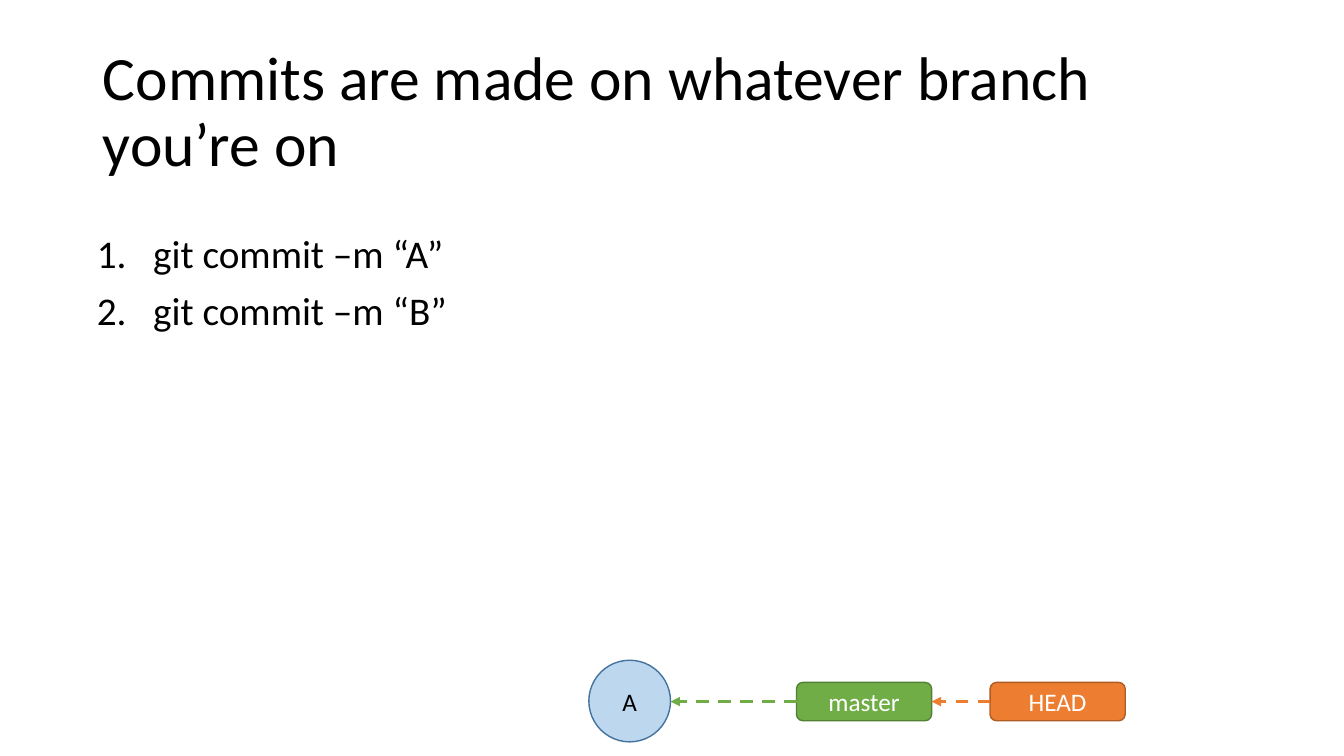
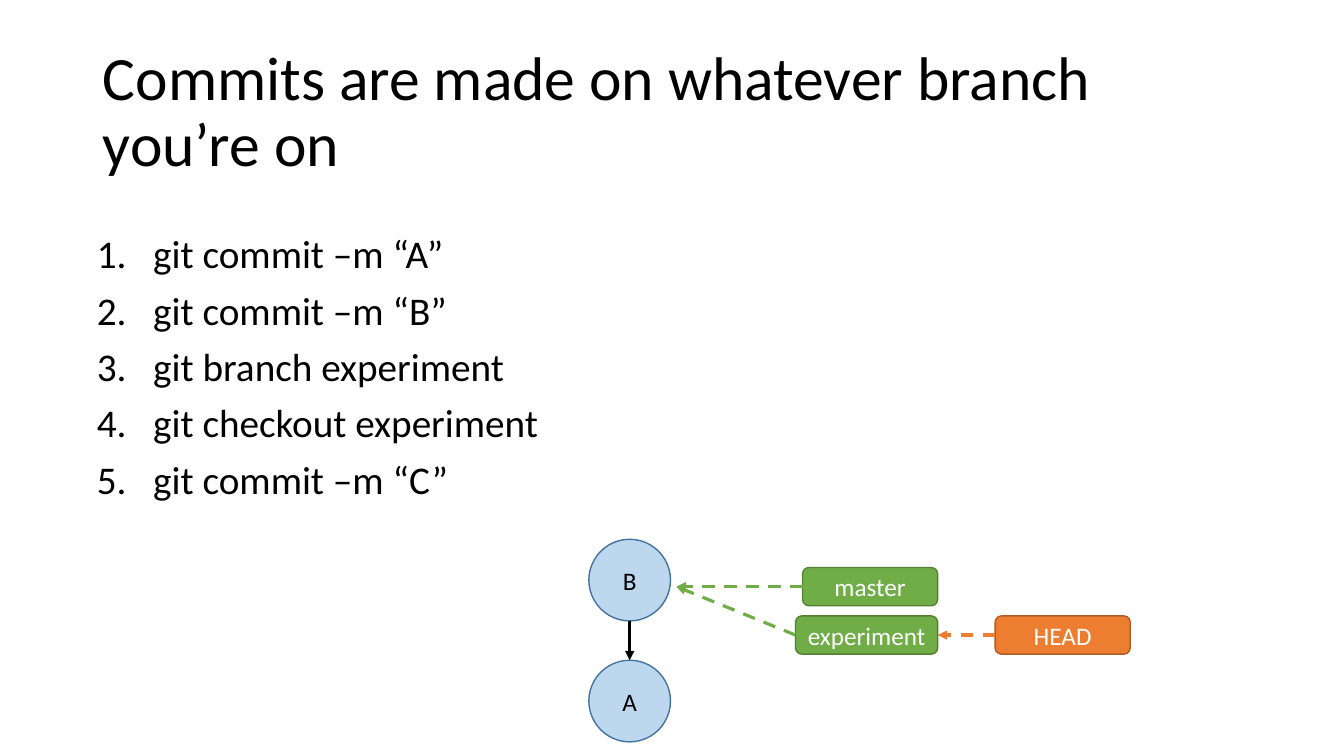
import pptx
import pptx.dml.color
import pptx.enum.dml
import pptx.enum.shapes
import pptx.enum.text
import pptx.oxml
import pptx.oxml.ns
import pptx.util
from dataclasses import dataclass
from typing import Any, Optional

Inches = pptx.util.Inches
Pt = pptx.util.Pt
SHAPES = pptx.enum.shapes.MSO_SHAPE
ALIGN = pptx.enum.text.PP_ALIGN
ANCHOR = pptx.enum.text.MSO_ANCHOR

# Shared style
COLORS = {
    "text": "000000",
    "light": "FFFFFF",
    "commit": "BDD7EE",
    "commit edge": "43739E",
    "branch": "70AD47",
    "branch edge": "538035",
    "head": "ED7D31",
    "head edge": "AF5C24",
}
FONT = "Calibri"
TITLE = "Commits are made on whatever branch you’re on"
TITLE_AREA = (0.92, 0.4, 11.5, 1.45)
LIST_AREA = (0.86, 2.28, 5.22, 4.76)
TITLE_FORMAT = {"alignment": ALIGN.LEFT, "line_spacing": 0.9}
LIST_FORMAT = {"alignment": ALIGN.LEFT, "line_spacing": 0.9,
               "space_before": Pt(10)}
LABEL_FORMAT = {"alignment": ALIGN.CENTER}
LIST_INDENT = 0.56
COMMIT_LEFT, COMMIT_SIZE = 5.84, 0.81
LABEL_HEIGHT = 0.38
TOP, LEFT, BOTTOM, RIGHT = range(4)


@dataclass
class Commit:
    name: str
    top: float


@dataclass
class Label:
    """A branch or HEAD tag, pointing at another label or at a position."""
    name: str
    left: float
    top: float
    points_to: Any
    width: float = 1.34
    style: str = "branch"


@dataclass
class Step:
    commands: list[str]
    commits: list[Commit]
    labels: list[Label]


COMMANDS = [
    "git commit –m “A”",
    "git commit –m “B”",
    "git branch experiment",
    "git checkout experiment",
    "git commit –m “C”",
]
FIRST = Commit("A", 6.55)
BRANCH_TARGET = (6.71, 5.82)
STEPS = [
    Step(COMMANDS[:2], [FIRST], [
        Label("master", 7.9, 6.77, (6.65, 6.96)),
        Label("HEAD", 9.82, 6.77, "master", style="head"),
    ]),
    Step(COMMANDS, [Commit("B", 5.35), FIRST], [
        Label("master", 7.96, 5.63, BRANCH_TARGET),
        Label("experiment", 7.89, 6.11, BRANCH_TARGET, width=1.41),
        Label("HEAD", 9.87, 6.11, "experiment", style="head"),
    ]),
]


def color(name: str) -> pptx.dml.color.RGBColor:
    return pptx.dml.color.RGBColor.from_string(COLORS[name])


def set_values(target: Any, values: dict[str, Any]) -> None:
    for name, value in values.items():
        setattr(target, name, value)


def write(para: Any, text: str, size: float, ink: str,
          layout: dict[str, Any]) -> None:
    set_values(para, layout)
    span = para.add_run()
    span.text = text
    set_values(span.font, {"name": FONT, "size": Pt(size)})
    span.font.color.rgb = color(ink)


def place(holder: Any, area: tuple, anchor: Any) -> Any:
    sides = ("left", "top", "width", "height")
    set_values(holder, dict(zip(sides, map(Inches, area))))
    set_values(holder.text_frame, {
        "word_wrap": True,
        "auto_size": pptx.enum.text.MSO_AUTO_SIZE.NONE,
        "vertical_anchor": anchor,
    })
    return holder.text_frame


def add_element(parent: Any, tag: str, **attributes: str) -> None:
    element = pptx.oxml.parse_xml(
        f"<a:{tag} {pptx.oxml.ns.nsdecls('a')}/>")
    for name, value in attributes.items():
        element.set(name, value)
    parent.append(element)


def add_list(holder: Any, commands: list[str]) -> None:
    frame = place(holder, LIST_AREA, ANCHOR.TOP)
    for index, command in enumerate(commands):
        para = frame.paragraphs[0] if index == 0 else frame.add_paragraph()
        write(para, command, 28, "text", LIST_FORMAT)
        properties = para._p.get_or_add_pPr()
        properties.set("marL", str(Inches(LIST_INDENT)))
        properties.set("indent", str(-Inches(LIST_INDENT)))
        add_element(properties, "buFont", typeface=FONT)
        add_element(properties, "buAutoNum", type="arabicPeriod")


def add_node(page: Any, kind: Any, area: tuple, text: str,
             style: str, ink: str) -> Any:
    node = page.shapes.add_shape(kind, *map(Inches, area))
    node.shadow.inherit = False
    node.fill.solid()
    node.fill.fore_color.rgb = color(style)
    node.line.color.rgb = color(f"{style} edge")
    node.line.width = Pt(1)
    set_values(node.text_frame, {"word_wrap": False,
                                 "vertical_anchor": ANCHOR.MIDDLE})
    write(node.text_frame.paragraphs[0], text, 18, ink, LABEL_FORMAT)
    return node


def add_arrow(page: Any, start: tuple, end: tuple, ink: str,
              dashed: bool = True) -> Any:
    arrow = page.shapes.add_connector(
        pptx.enum.shapes.MSO_CONNECTOR.STRAIGHT, *map(Inches, start + end))
    arrow.line.color.rgb = color(ink)
    arrow.line.width = Pt(2.25)
    if dashed:
        arrow.line.dash_style = pptx.enum.dml.MSO_LINE.DASH
    add_element(arrow.line._get_or_add_ln(), "tailEnd", type="triangle")
    add_element(arrow._element.spPr, "effectLst")
    return arrow


def add_commits(page: Any, commits: list[Commit]) -> None:
    center = COMMIT_LEFT + COMMIT_SIZE / 2
    previous: Optional[Commit] = None
    for commit in commits:
        add_node(page, SHAPES.OVAL,
                 (COMMIT_LEFT, commit.top, COMMIT_SIZE, COMMIT_SIZE),
                 commit.name, "commit", "text")
        if previous:
            add_arrow(page, (center, previous.top + COMMIT_SIZE),
                      (center, commit.top), "text", dashed=False)
        previous = commit


def add_labels(page: Any, labels: list[Label]) -> None:
    boxes = {
        label.name: add_node(
            page, SHAPES.ROUNDED_RECTANGLE,
            (label.left, label.top, label.width, LABEL_HEIGHT),
            label.name, label.style, "light")
        for label in labels
    }
    for label in labels:
        target = boxes.get(label.points_to)
        start = (label.left, label.top + LABEL_HEIGHT / 2)
        end = start if target else label.points_to
        arrow = add_arrow(page, start, end, label.style)
        arrow.begin_connect(boxes[label.name], LEFT)
        if target:
            arrow.end_connect(target, RIGHT)


def add_step(deck: Any, step: Step) -> None:
    page = deck.slides.add_slide(deck.slide_layouts[1])
    heading = place(page.shapes.title, TITLE_AREA, ANCHOR.MIDDLE)
    write(heading.paragraphs[0], TITLE, 44, "text", TITLE_FORMAT)
    add_list(page.placeholders[1], step.commands)
    add_commits(page, step.commits)
    add_labels(page, step.labels)


def main() -> None:
    deck = pptx.Presentation()
    deck.slide_width, deck.slide_height = Inches(13.33), Inches(7.5)
    for step in STEPS:
        add_step(deck, step)
    deck.save("out.pptx")


if __name__ == "__main__":
    main()
